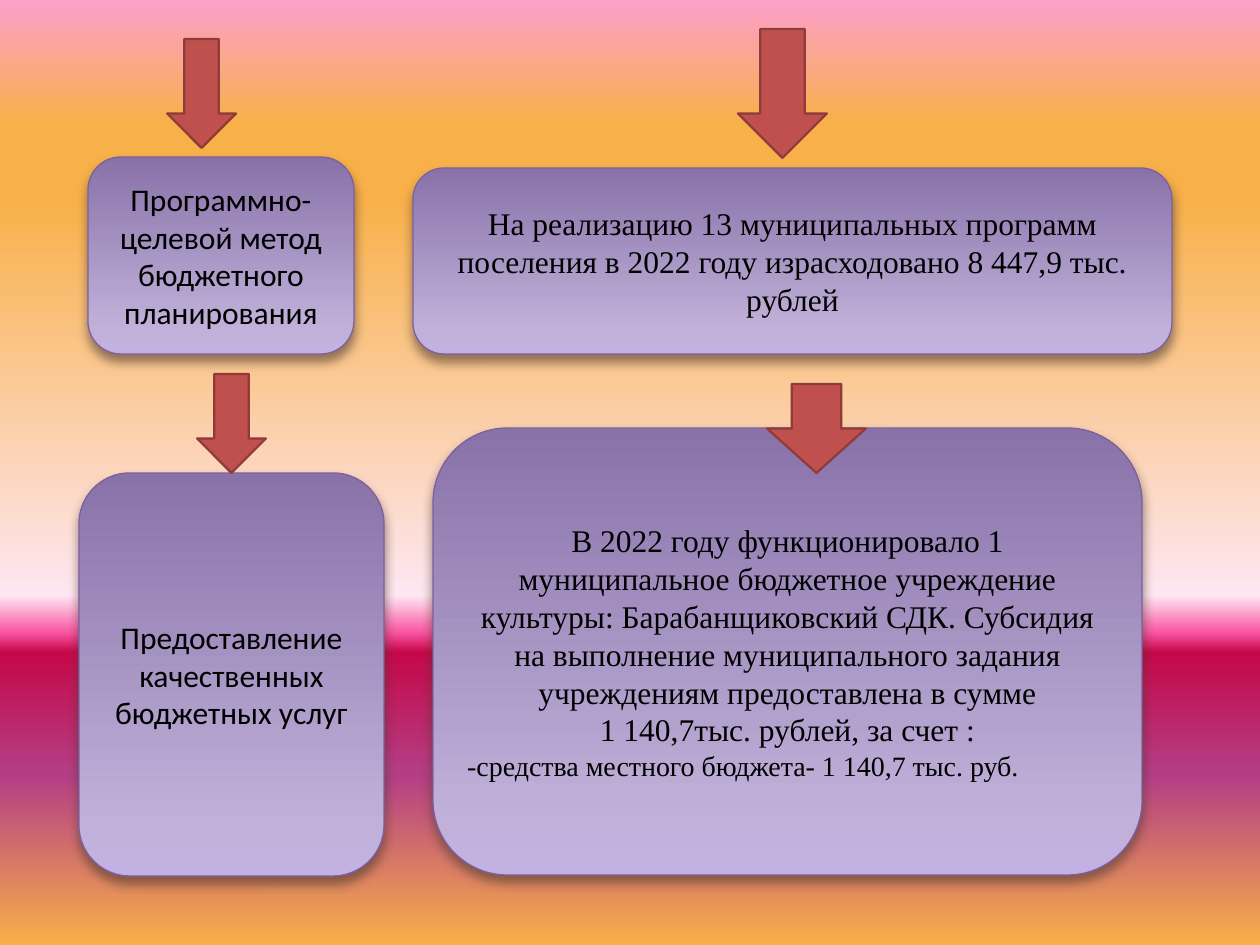
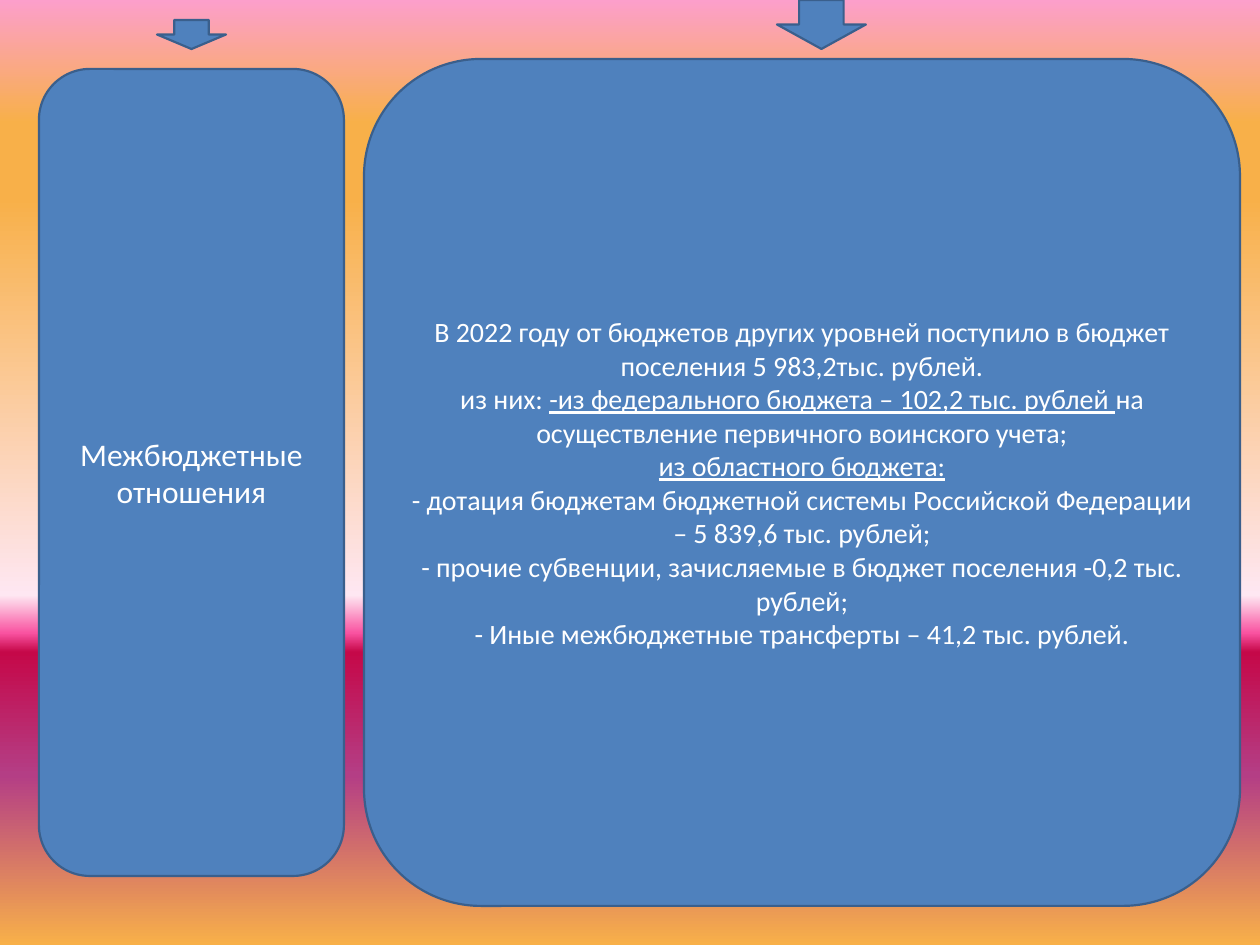
"""Build two slides on budget planning methods and intergovernmental transfers."""
import pptx
import pptx.dml.color
import pptx.enum.shapes
import pptx.enum.text
import pptx.oxml
import pptx.oxml.ns
import pptx.util

EMU_PER_PX = 914400 / 126
SLIDE_SIZE = (1260, 945)

COLORS = {
    "red": "C0504D", "red_edge": "8E3B39",
    "blue": "4F81BD", "blue_edge": "3A5F8C",
    "purple_edge": "7D60A0", "shadow": "4E3B30",
    "black": "000000", "white": "FFFFFF",
}
SUNSET = [(0, "FC9FCB"), (13, "F8B049"), (21, "F8B049"), (63, "FEE7F2"),
          (67, "F952A0"), (69, "C50849"), (82, "B43E85"), (100, "F8B049")]
PURPLE = [(0, "C4B1E3"), (12, "C1B1DA"), (100, "8872A8")]

SANS, SERIF = "Calibri", "Times New Roman"
CENTER = pptx.enum.text.PP_ALIGN.CENTER
LEFT = pptx.enum.text.PP_ALIGN.LEFT
ROUNDED = pptx.enum.shapes.MSO_SHAPE.ROUNDED_RECTANGLE
DOWN_ARROW = pptx.enum.shapes.MSO_SHAPE.DOWN_ARROW

SLIDES = [
    {
        "look": "purple", "text": "black", "arrow": "red",
        "panels": [
            {"at": (88, 157, 266, 197), "font": SANS, "paragraphs": [
                (18, CENTER, ["Программно-целевой метод бюджетного планирования"])]},
            {"at": (413, 168, 759, 186), "font": SERIF, "paragraphs": [
                (18, CENTER, ["На реализацию 13 муниципальных программ поселения "
                              "в 2022 году израсходовано 8 447,9 тыс. рублей"])]},
            {"at": (79, 473, 305, 403), "font": SANS, "paragraphs": [
                (18, CENTER, ["Предоставление качественных бюджетных услуг"])]},
            {"at": (433, 428, 709, 447), "font": SERIF, "paragraphs": [
                (18, CENTER, ["В 2022 году функционировало 1 муниципальное бюджетное "
                              "учреждение культуры: Барабанщиковский СДК. Субсидия на "
                              "выполнение муниципального задания учреждениям "
                              "предоставлена в сумме\v1 140,7тыс. рублей, за счет :"]),
                (16, LEFT, ["-средства местного бюджета- 1 140,7 тыс. руб."])]},
        ],
        "arrows": [(167, 39, 69, 109), (197, 374, 69, 99),
                   (738, 29, 89, 129), (767, 384, 99, 89)],
    },
    {
        "look": "blue", "text": "white", "arrow": "blue",
        "panels": [
            {"at": (39, 69, 305, 807), "font": SANS, "paragraphs": [
                (18, CENTER, ["Межбюджетные отношения"])]},
            {"at": (364, 59, 876, 847), "font": SANS, "corner": 0.138, "paragraphs": [
                (16, CENTER, ["В 2022 году от бюджетов других уровней поступило "
                              "в бюджет поселения 5 983,2тыс. рублей."]),
                (16, CENTER, ["из них: ", "-из федерального бюджета – 102,2 тыс. рублей ",
                              "на осуществление первичного воинского учета;"]),
                (16, CENTER, ["", "из областного бюджета:"]),
                (16, CENTER, ["- дотация бюджетам бюджетной системы Российской "
                              "Федерации – 5 839,6 тыс. рублей;"]),
                (16, CENTER, ["- прочие субвенции, зачисляемые в бюджет поселения "
                              "-0,2 тыс. рублей;"]),
                (16, CENTER, ["- Иные межбюджетные трансферты – 41,2 тыс. рублей."])]},
        ],
        "arrows": [(157, 20, 69, 29), (777, 0, 89, 49)],
    },
]


def px(length):
    return pptx.util.Emu(round(length * EMU_PER_PX))


def rgb(name):
    return pptx.dml.color.RGBColor.from_string(COLORS[name])


def child(parent, tag, **attributes):
    element = parent.makeelement(pptx.oxml.ns.qn(tag), {})
    for key, value in attributes.items():
        element.set(key, str(value))
    parent.append(element)
    return element


def paint_gradient(fill, owner, stops, degrees):
    fill.gradient()
    gradient = owner.find(".//" + pptx.oxml.ns.qn("a:gradFill"))
    stop_list = gradient.find(pptx.oxml.ns.qn("a:gsLst"))
    for old_stop in list(stop_list):
        stop_list.remove(old_stop)
    for percent, color in stops:
        stop = child(stop_list, "a:gs", pos=percent * 1000)
        child(stop, "a:srgbClr", val=color)
    gradient.find(pptx.oxml.ns.qn("a:lin")).set("ang", str(degrees * 60000))


def cast_shadow(shape):
    effects = shape.element.spPr.find(pptx.oxml.ns.qn("a:effectLst"))
    shadow = child(effects, "a:outerShdw", blurRad=pptx.util.Pt(6),
                   dist=pptx.util.Pt(4), dir=90 * 60000, algn="ctr", rotWithShape=0)
    color = child(shadow, "a:srgbClr", val=COLORS["shadow"])
    child(color, "a:alpha", val=60000)


def add_block(slide, preset, at, look):
    shape = slide.shapes.add_shape(preset, *map(px, at))
    shape.shadow.inherit = False
    shape.line.color.rgb = rgb(look + "_edge")
    if look == "purple":
        paint_gradient(shape.fill, shape.element, PURPLE, 270)
        shape.line.width = pptx.util.Pt(0.75)
        cast_shadow(shape)
    else:
        shape.fill.solid()
        shape.fill.fore_color.rgb = rgb(look)
        shape.line.width = pptx.util.Pt(1.25)
    return shape


def write(frame, paragraphs, font, color):
    """Fill the frame; every second piece of a paragraph is underlined."""
    for index, (size, alignment, pieces) in enumerate(paragraphs):
        paragraph = frame.add_paragraph() if index else frame.paragraphs[0]
        paragraph.alignment = alignment
        paragraph.font.name = font
        paragraph.font.size = pptx.util.Pt(size)
        paragraph.font.color.rgb = rgb(color)
        if len(pieces) == 1:
            paragraph.text = pieces[0]
            continue
        for position, piece in enumerate(pieces):
            if piece:
                run = paragraph.add_run()
                run.text = piece
                run.font.underline = position % 2 == 1


def build_slide(deck, content):
    slide = deck.slides.add_slide(deck.slide_layouts[6])
    paint_gradient(slide.background.fill, slide.element, SUNSET, 90)
    for panel in content["panels"]:
        block = add_block(slide, ROUNDED, panel["at"], content["look"])
        if "corner" in panel:
            block.adjustments[0] = panel["corner"]
        block.text_frame.word_wrap = True
        write(block.text_frame, panel["paragraphs"], panel["font"], content["text"])
    for at in content["arrows"]:
        add_block(slide, DOWN_ARROW, at, content["arrow"])


def main():
    deck = pptx.Presentation()
    deck.slide_width, deck.slide_height = map(px, SLIDE_SIZE)
    for content in SLIDES:
        build_slide(deck, content)
    deck.save("out.pptx")


if __name__ == "__main__":
    main()
